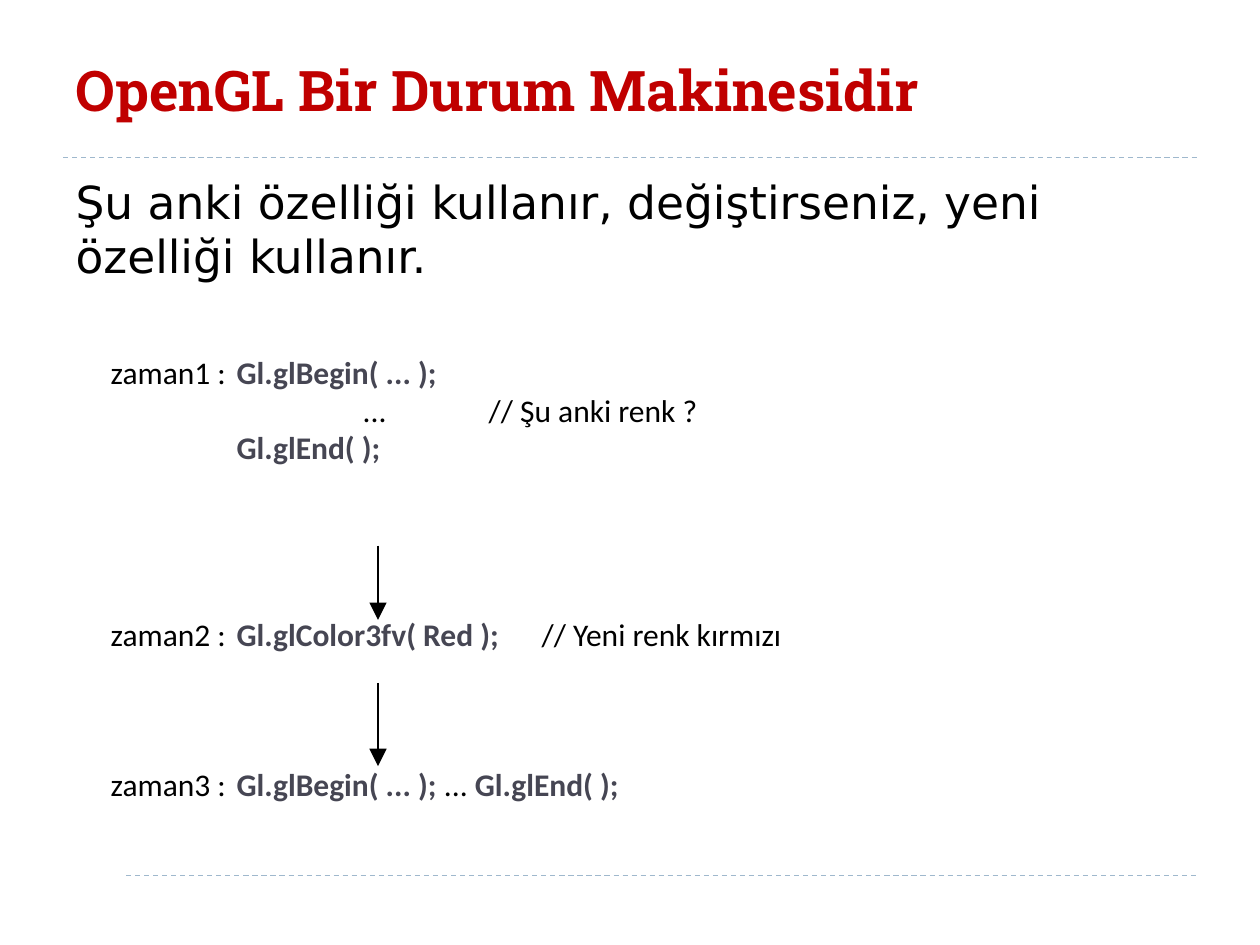
from lxml import etree
from pptx import Presentation
from pptx.dml.color import RGBColor
from pptx.enum.dml import MSO_LINE
from pptx.enum.shapes import MSO_CONNECTOR
from pptx.enum.text import MSO_ANCHOR, MSO_AUTO_SIZE, PP_ALIGN
from pptx.oxml.ns import qn
from pptx.util import Inches, Pt

STRAIGHT = MSO_CONNECTOR.STRAIGHT
DASH = MSO_LINE.DASH
LEFT = PP_ALIGN.LEFT
TOP, MIDDLE = MSO_ANCHOR.TOP, MSO_ANCHOR.MIDDLE
FIT_SHAPE, FIT_NONE = MSO_AUTO_SIZE.SHAPE_TO_FIT_TEXT, MSO_AUTO_SIZE.NONE

W, H = 10, 7.5
MARGIN = 0.05 * W
CODE_LEFT = 0.78
ARROW_X = 0.3 * W

TITLE = "OpenGL Bir Durum Makinesidir"
BODY = "Şu anki özelliği kullanır, değiştirseniz, yeni özelliği kullanır."
TITLE_FONT = dict(name="Roboto Slab", size=Pt(32), bold=True)
BODY_FONT = dict(name="DejaVu Sans", size=Pt(26), bold=False)
PLAIN = dict(name="Calibri", size=Pt(18), bold=False)
CODE = dict(PLAIN, bold=True)
BLACK, RED, SLATE, RULE = "000000", "C00000", "464653", "9FB8CD"

STEPS = [
    (2.75, 1.01, (1, 2, 3), [
        [("zaman1 :\t", False), ("Gl.glBegin( ... );", True)],
        [("\t\t...\t// Şu anki renk ?", False)],
        [("\t", False), ("Gl.glEnd( );", True)],
    ]),
    (4.83, 0.4, (1, 3.42), [
        [("zaman2 :\t", False), ("Gl.glColor3fv( Red );", True),
         ("\t// Yeni renk kırmızı", False)],
    ]),
    (6.02, 0.4, (1,), [
        [("zaman3 :\t", False), ("Gl.glBegin( ... );", True),
         (" ... ", False), ("Gl.glEnd( );", True)],
    ]),
]
RULES = [(MARGIN, 1.25), (0.1 * W, 6.95)]
ARROWS = [(4.33, 4.92), (5.42, 6.08)]


def rgb(value):
    return RGBColor.from_string(value)


def add_run(p, text, font, color):
    r = p.add_run()
    r.text = text
    for key, value in font.items():
        setattr(r.font, key, value)
    r.font.color.rgb = rgb(color)


def add_line(s, start, end, color, width):
    line = s.shapes.add_connector(STRAIGHT, *map(Inches, start + end))
    line.line.color.rgb = rgb(color)
    line.line.width = Pt(width)
    etree.SubElement(line._element.spPr, qn("a:effectLst"))
    return line


def fill_placeholder(sp, box, anchor, text, font, color):
    sp.left, sp.top, sp.width, sp.height = map(Inches, box)
    tf = sp.text_frame
    tf.auto_size = FIT_NONE
    tf.vertical_anchor = anchor
    p = tf.paragraphs[0]
    pPr = p._p.get_or_add_pPr()
    pPr.set("marL", "0")
    pPr.set("indent", "0")
    etree.SubElement(pPr, qn("a:buNone"))
    p.alignment = LEFT
    p.space_before = Pt(0)
    add_run(p, text, font, color)


def add_step(s, top, height, stops, lines):
    box = (CODE_LEFT, top, W - MARGIN - CODE_LEFT, height)
    tf = s.shapes.add_textbox(*map(Inches, box)).text_frame
    tf.word_wrap = True
    tf.auto_size = FIT_SHAPE
    p = tf.paragraphs[0]
    tabs = etree.SubElement(p._p.get_or_add_pPr(), qn("a:tabLst"))
    for stop in stops:
        etree.SubElement(tabs, qn("a:tab"), pos=str(Inches(stop)), algn="l")
    for i, line in enumerate(lines):
        if i:
            p.add_line_break()
        for text, is_code in line:
            add_run(p, text, CODE if is_code else PLAIN, SLATE if is_code else BLACK)


def main():
    prs = Presentation()
    prs.slide_width, prs.slide_height = Inches(W), Inches(H)
    s = prs.slides.add_slide(prs.slide_layouts[1])
    wide = W - 2 * MARGIN
    title, body = s.placeholders
    fill_placeholder(title, (MARGIN, 0.17, wide, 1.08), MIDDLE, TITLE, TITLE_FONT, RED)
    fill_placeholder(body, (MARGIN, 1.33, wide, 5.4), TOP, BODY, BODY_FONT, BLACK)
    for x, y in RULES:
        add_line(s, (x, y), (W - MARGIN, y), RULE, 0.75).line.dash_style = DASH
    for step in STEPS:
        add_step(s, *step)
    for y1, y2 in ARROWS:
        arrow = add_line(s, (ARROW_X, y1), (ARROW_X, y2), BLACK, 1)
        etree.SubElement(arrow.line._get_or_add_ln(), qn("a:tailEnd"),
                         type="triangle", w="lg", len="lg")
    prs.save("out.pptx")


if __name__ == "__main__":
    main()
